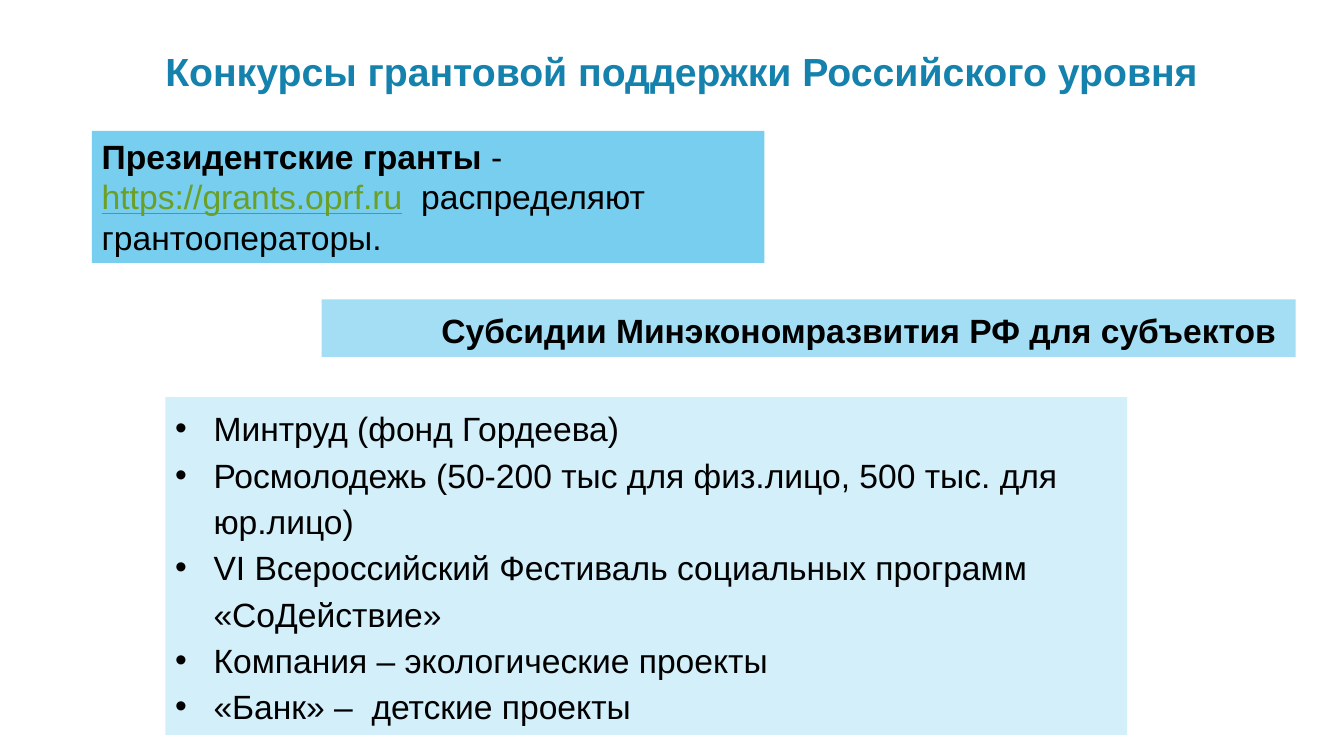
from pptx import Presentation
from pptx.dml.color import RGBColor
from pptx.enum.shapes import MSO_SHAPE
from pptx.enum.text import MSO_ANCHOR, PP_ALIGN
from pptx.oxml.xmlchemy import OxmlElement
from pptx.util import Inches, Pt

WIDTH, HEIGHT = Inches(13.33), Inches(7.5)
FONT = "Arial"
BLACK = RGBColor(0x00, 0x00, 0x00)
TITLE_BLUE = RGBColor(0x14, 0x82, 0xAC)
LINK_GREEN = RGBColor(0x6B, 0x9F, 0x25)
STRONG_BLUE = RGBColor(0x77, 0xCE, 0xEF)
MID_BLUE = RGBColor(0xA4, 0xDE, 0xF4)
PALE_BLUE = RGBColor(0xD2, 0xEF, 0xFA)

PROGRAMS = [
    "Минтруд (фонд Гордеева)",
    "Росмолодежь (50-200 тыс для физ.лицо, 500 тыс. для юр.лицо)",
    "VI Всероссийский Фестиваль социальных программ «СоДействие»",
    "Компания – экологические проекты",
    "«Банк» –  детские проекты",
]


def share_box(left, top, width, height):
    return (int(WIDTH * left / 100), int(HEIGHT * top / 100),
            int(WIDTH * width / 100), int(HEIGHT * height / 100))


def add_text(p, text, size=24, color=BLACK, bold=False, underline=False):
    r = p.add_run()
    r.text = text
    r.font.name = FONT
    r.font.size = Pt(size)
    r.font.color.rgb = color
    r.font.bold = bold
    r.font.underline = underline


def format_paragraph(p, spacing=1.0, margin=0, indent=0, after=0, bullet=None):
    p.alignment = PP_ALIGN.LEFT
    p.line_spacing = spacing
    p.space_before = Pt(0)
    p.space_after = Pt(after)
    pPr = p._p.get_or_add_pPr()
    pPr.set("marL", str(Inches(margin)))
    pPr.set("indent", str(Inches(indent)))
    if bullet:
        font = OxmlElement("a:buFont")
        font.set("typeface", FONT)
        mark = OxmlElement("a:buChar")
        mark.set("char", bullet)
        pPr.extend([font, mark])


def set_frame(tf):
    tf.word_wrap = True
    tf.vertical_anchor = MSO_ANCHOR.TOP
    tf.margin_left = tf.margin_right = Inches(0.1)
    tf.margin_top = tf.margin_bottom = Inches(0.05)


def add_title(s, text, box):
    sp = s.shapes.title
    sp.left, sp.top, sp.width, sp.height = box
    set_frame(sp.text_frame)
    p = sp.text_frame.paragraphs[0]
    format_paragraph(p, spacing=1.15)
    add_text(p, text, size=28, color=TITLE_BLUE, bold=True)


def add_panel(s, box, fill):
    sp = s.shapes.add_shape(MSO_SHAPE.RECTANGLE, *box)
    sp.shadow.inherit = False
    sp.fill.solid()
    sp.fill.fore_color.rgb = fill
    sp.line.fill.background()
    set_frame(sp.text_frame)
    return sp.text_frame


def add_bullets(tf, items):
    for i, item in enumerate(items):
        p = tf.add_paragraph() if i else tf.paragraphs[0]
        after = 10 if i == len(items) - 1 else 0
        format_paragraph(p, spacing=1.15, margin=0.38, indent=-0.38,
                         after=after, bullet="•")
        add_text(p, item)


def main():
    prs = Presentation()
    prs.slide_width, prs.slide_height = WIDTH, HEIGHT
    s = prs.slides.add_slide(prs.slide_layouts[5])

    add_title(s, "Конкурсы грантовой поддержки Российского уровня",
              share_box(11.55, 4.67, 79.22, 8))

    p = add_panel(s, share_box(6.83, 17.33, 50.04, 17.47), STRONG_BLUE).paragraphs[0]
    format_paragraph(p)
    add_text(p, "Президентские гранты", bold=True)
    add_text(p, " - ")
    add_text(p, "https://grants.oprf.ru", color=LINK_GREEN, underline=True)
    add_text(p, "  распределяют грантооператоры.")

    p = add_panel(s, share_box(23.93, 39.6, 72.47, 7.6), MID_BLUE).paragraphs[0]
    format_paragraph(p, spacing=1.15, margin=0.5, indent=0.59)
    add_text(p, "Субсидии Минэкономразвития РФ для субъектов", bold=True)

    add_bullets(add_panel(s, share_box(12.3, 52.53, 71.57, 44.67), PALE_BLUE), PROGRAMS)

    prs.save("out.pptx")


if __name__ == "__main__":
    main()
